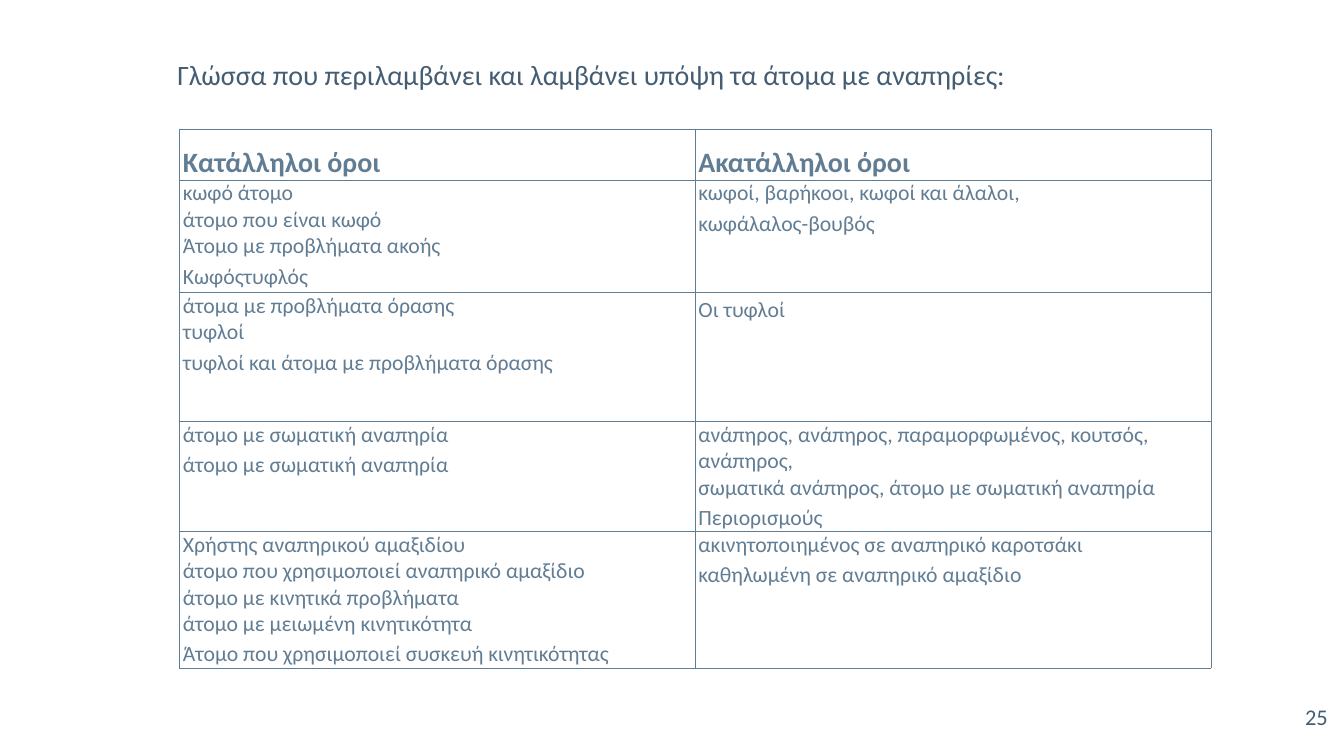
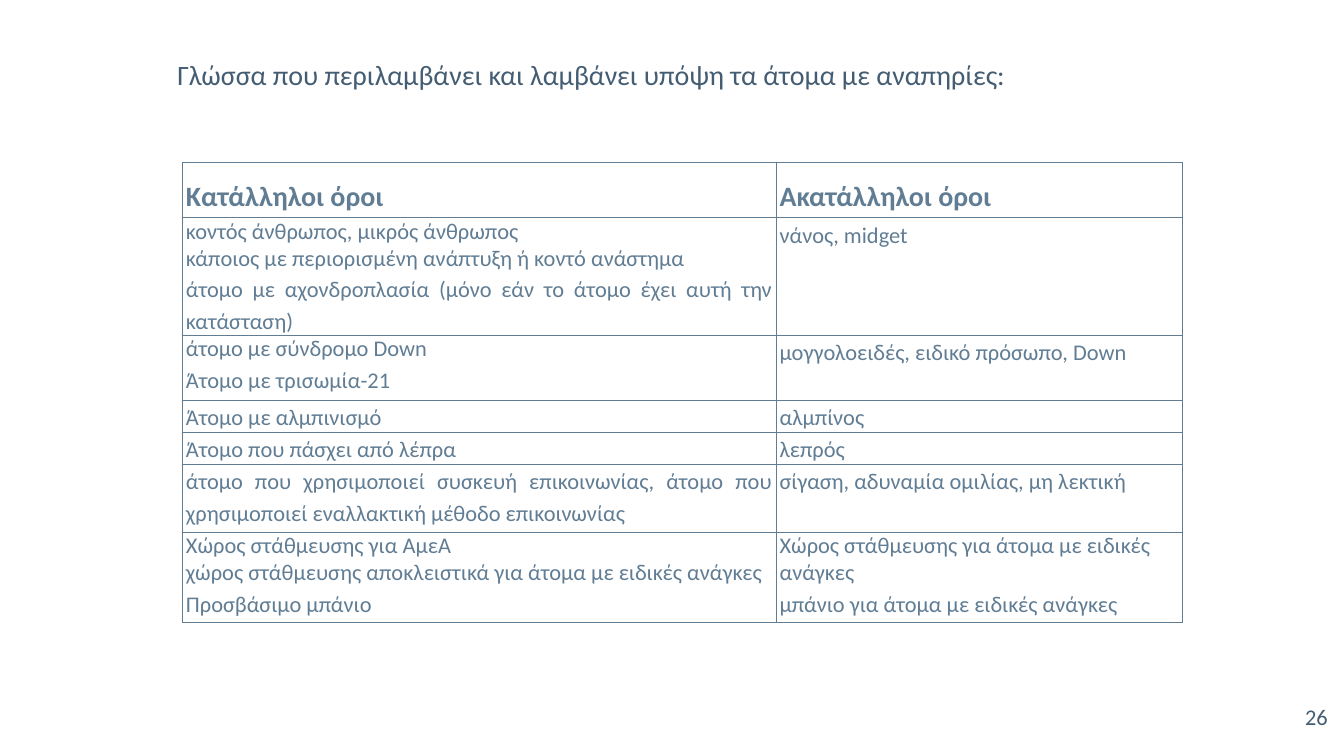
import dataclasses

import pptx
import pptx.dml.color
import pptx.enum.text
import pptx.oxml
import pptx.oxml.ns
import pptx.util

PX = 9144  # one px is a hundredth of an inch
WIDE, HIGH = 2667, 1500
FONT = "Calibri"
NAVY = pptx.dml.color.RGBColor(0x44, 0x5D, 0x73)
STEEL = pptx.dml.color.RGBColor(0x61, 0x7D, 0x94)
ALIGN = pptx.enum.text.PP_ALIGN
ANCHOR = pptx.enum.text.MSO_ANCHOR

HEADING = "Γλώσσα που περιλαμβάνει και λαμβάνει υπόψη τα άτομα με αναπηρίες:"
HEADS = ("Κατάλληλοι όροι", "Ακατάλληλοι όροι")


@dataclasses.dataclass(frozen=True)
class Row:
    high: int
    good: str
    bad: str


@dataclasses.dataclass(frozen=True)
class Page:
    number: int
    left: int
    top: int
    cols: tuple[int, int]
    head: int
    size: int
    rows: tuple[Row, ...]


PAGES = (
    Page(25, 356, 256, (1023, 1024), 88, 31, (
        Row(223, "κωφό άτομο\nάτομο που είναι κωφό\nΆτομο με προβλήματα ακοής\nΚωφόςτυφλός",
            "κωφοί, βαρήκοοι, κωφοί και άλαλοι,\nκωφάλαλος-βουβός"),
        Row(256, "άτομα με προβλήματα όρασης\nτυφλοί\n"
            "τυφλοί και άτομα με προβλήματα όρασης",
            "Οι τυφλοί"),
        Row(165, "άτομο με σωματική αναπηρία\nάτομο με σωματική αναπηρία",
            "ανάπηρος, ανάπηρος, παραμορφωμένος, κουτσός, ανάπηρος,\n"
            "σωματικά ανάπηρος, άτομο με σωματική αναπηρία\nΠεριορισμούς"),
        Row(255, "Χρήστης αναπηρικού αμαξιδίου\n"
            "άτομο που χρησιμοποιεί αναπηρικό αμαξίδιο\n"
            "άτομο με κινητικά προβλήματα\nάτομο με μειωμένη κινητικότητα\n"
            "Άτομο που χρησιμοποιεί συσκευή κινητικότητας",
            "ακινητοποιημένος σε αναπηρικό καροτσάκι\n"
            "καθηλωμένη σε αναπηρικό αμαξίδιο"),
    )),
    Page(26, 362, 323, (1178, 806), 109, 32, (
        Row(178, "κοντός άνθρωπος, μικρός άνθρωπος\n"
            "κάποιος με περιορισμένη ανάπτυξη ή κοντό ανάστημα\n"
            "άτομο με αχονδροπλασία (μόνο εάν το άτομο έχει αυτή την κατάσταση)",
            "νάνος, midget"),
        Row(128, "άτομο με σύνδρομο Down\nΆτομο με τρισωμία-21",
            "μογγολοειδές, ειδικό πρόσωπο, Down"),
        Row(64, "Άτομο με αλμπινισμό", "αλμπίνος"),
        Row(64, "Άτομο που πάσχει από λέπρα", "λεπρός"),
        Row(134, "άτομο που χρησιμοποιεί συσκευή επικοινωνίας, "
            "άτομο που χρησιμοποιεί εναλλακτική μέθοδο επικοινωνίας",
            "σίγαση, αδυναμία ομιλίας, μη λεκτική"),
        Row(179, "Χώρος στάθμευσης για ΑμεΑ\n"
            "χώρος στάθμευσης αποκλειστικά για άτομα με ειδικές ανάγκες\n"
            "Προσβάσιμο μπάνιο",
            "Χώρος στάθμευσης για άτομα με ειδικές ανάγκες\n"
            "μπάνιο για άτομα με ειδικές ανάγκες"),
    )),
)


def px(count: int) -> pptx.util.Emu:
    return pptx.util.Emu(count * PX)


def write(frame, text: str, *, size: int, color=NAVY, bold=False,
          align=ALIGN.LEFT, gap=1.0) -> None:
    """Fill a frame; align and gap format the last line, the others stay plain."""
    frame.word_wrap = True
    frame.text = text
    for para in frame.paragraphs:
        para.alignment, para.line_spacing = ALIGN.LEFT, 1.0
        for run in para.runs:
            font = run.font
            font.name, font.size, font.bold = FONT, pptx.util.Pt(size), bold
            font.color.rgb = color
    para.alignment, para.line_spacing = align, gap


def inset(part, side: int, edge: int) -> None:
    part.margin_left = part.margin_right = px(side)
    part.margin_top = part.margin_bottom = px(edge)


def place(shape, left: int, top: int, wide: int, high: int) -> None:
    shape.left, shape.top = px(left), px(top)
    shape.width, shape.height = px(wide), px(high)


def frame_cell(cell) -> None:
    props = cell._tc.get_or_add_tcPr()
    for side in ("lnL", "lnR", "lnT", "lnB"):
        props.append(pptx.oxml.parse_xml(
            f'<a:{side} {pptx.oxml.ns.nsdecls("a")} w="12700"><a:solidFill>'
            f'<a:srgbClr val="{STEEL}"/></a:solidFill></a:{side}>'))
    cell.fill.background()
    inset(cell, 7, 0)
    cell.vertical_anchor = ANCHOR.TOP


def add_terms(slide, page: Page) -> None:
    rows = (Row(page.head, *HEADS), *page.rows)
    high = sum(row.high for row in rows)
    table = slide.shapes.add_table(
        len(rows), len(page.cols), px(page.left), px(page.top),
        px(sum(page.cols)), px(high)).table
    table.horz_banding = False
    table.first_row = False
    for col, wide in zip(table.columns, page.cols):
        col.width = px(wide)
    for i, row in enumerate(rows):
        table.rows[i].height = px(row.high)
        top = i == 0
        for cell, text in zip(table.rows[i].cells, (row.good, row.bad)):
            frame_cell(cell)
            write(cell.text_frame, text, size=40 if top else page.size,
                  color=STEEL, bold=top, align=ALIGN.JUSTIFY,
                  gap=1.5 if top else 1.15)


def add_page(deck, page: Page) -> None:
    slide = deck.slides.add_slide(deck.slide_layouts.get_by_name("Title Only"))
    add_terms(slide, page)
    title = slide.shapes.title
    place(title, 346, 107, 2175, 82)
    frame = title.text_frame
    inset(frame, 6, 6)
    frame.auto_size = pptx.enum.text.MSO_AUTO_SIZE.NONE
    frame.vertical_anchor = ANCHOR.MIDDLE
    write(frame, HEADING, size=40)
    box = slide.shapes.add_textbox(px(2495), px(1385), px(160), px(115))
    inset(box.text_frame, 20, 10)
    write(box.text_frame, str(page.number), size=32, align=ALIGN.RIGHT)


def main() -> None:
    deck = pptx.Presentation()
    deck.slide_width, deck.slide_height = px(WIDE), px(HIGH)
    for page in PAGES:
        add_page(deck, page)
    deck.save("out.pptx")


if __name__ == "__main__":
    main()
